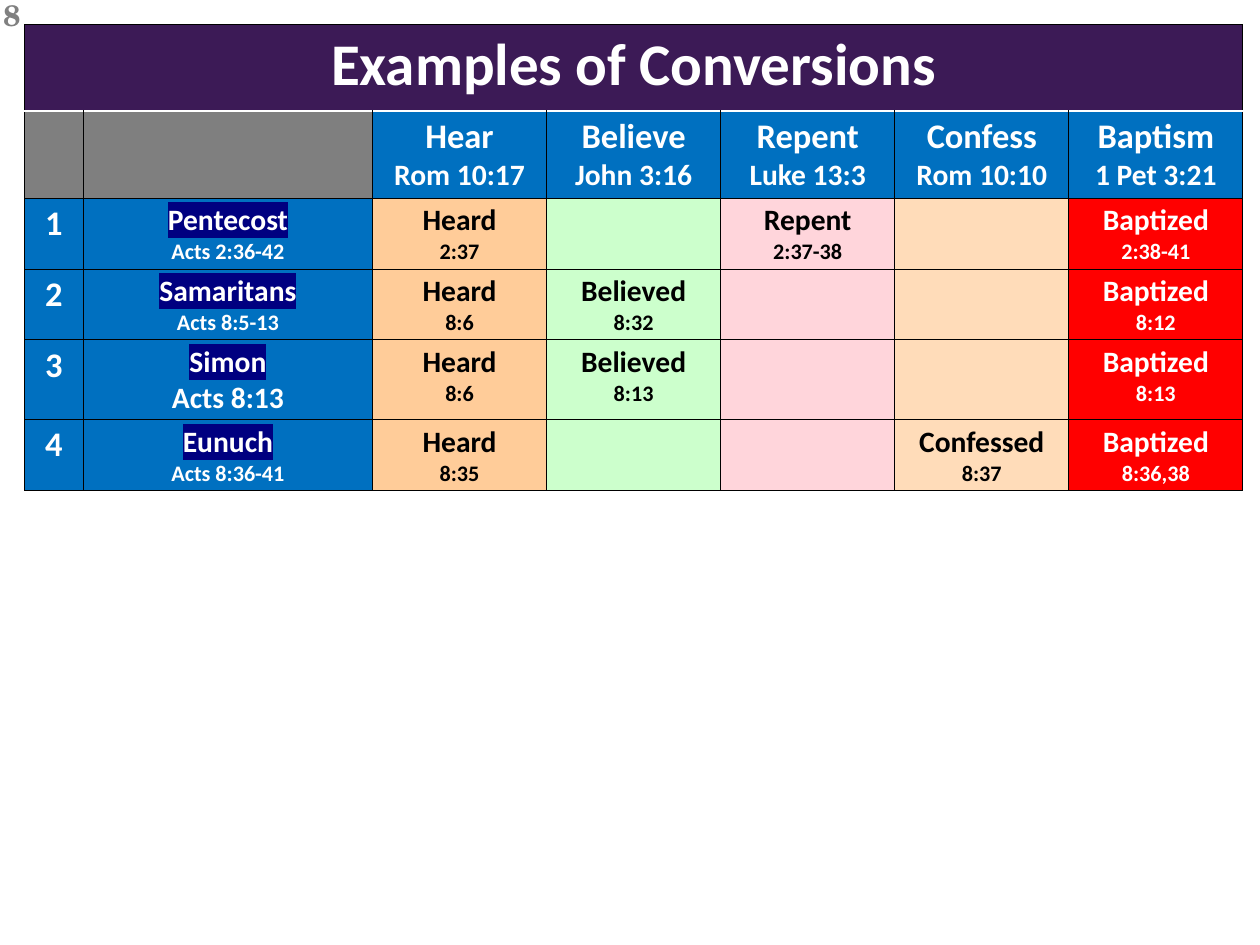
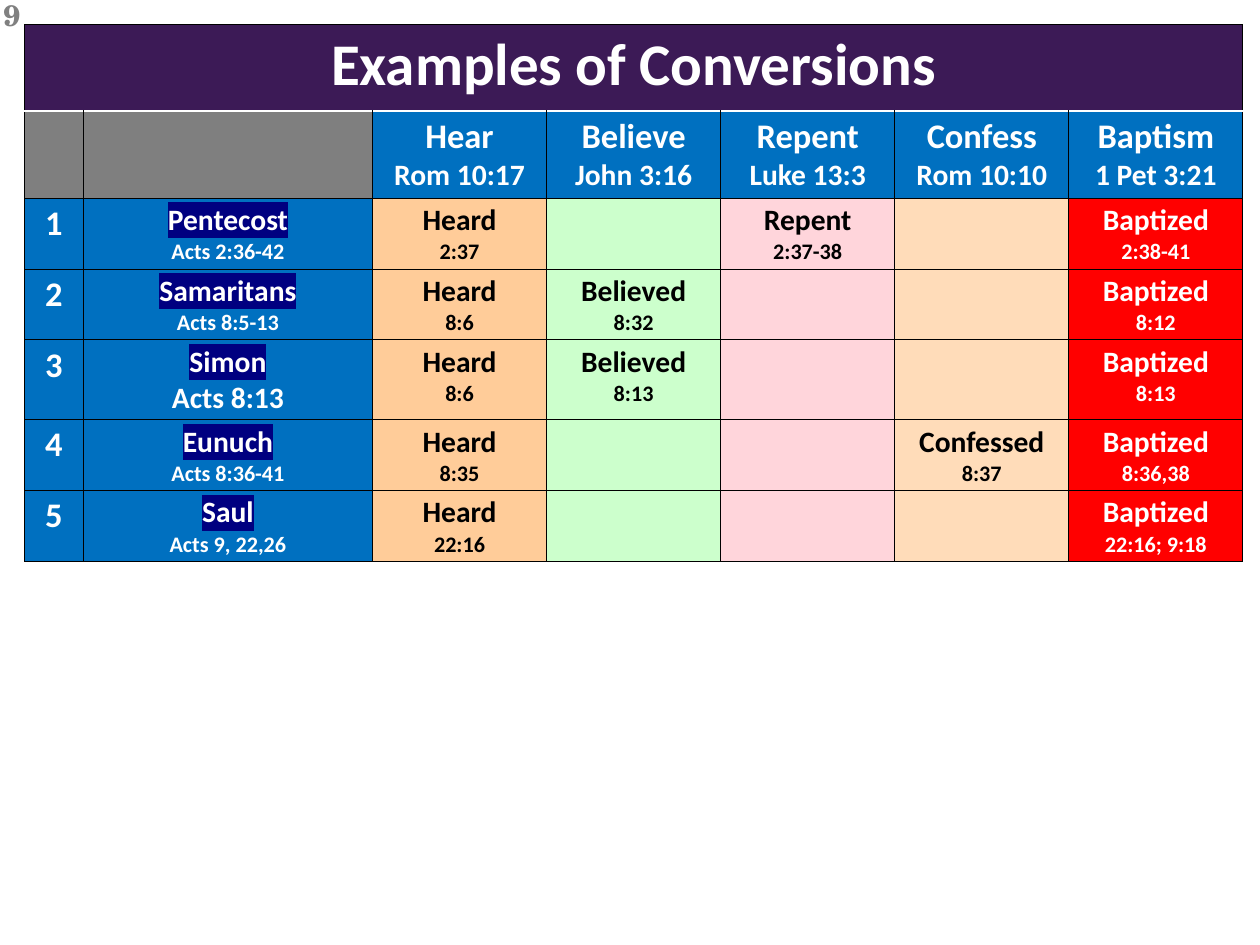
from dataclasses import dataclass

from lxml.etree import SubElement
from pptx import Presentation
from pptx.dml.color import RGBColor
from pptx.enum.text import MSO_ANCHOR, PP_ALIGN
from pptx.oxml.ns import qn
from pptx.util import Cm, Pt


@dataclass(frozen=True)
class Theme:
    # Fonts
    body_font: str = "Calibri"
    number_font: str = "TeX Gyre Schola"
    # Colours
    white: str = "FFFFFF"
    black: str = "000000"
    banner: str = "3C1A56"
    label: str = "0070C0"
    highlight: str = "000080"
    corner: str = "7F7F7F"
    page_number: str = "808080"
    steps: tuple = ("FFCC99", "CCFFCC", "FFD5DB", "FFDCB9", "FF0000")
    # Type sizes in points
    title: int = 48
    heading: int = 28
    name: int = 24
    verse: int = 18


# Content
TITLE = "Examples of Conversions"
STEPS = [("Hear", "Rom 10:17"), ("Believe", "John 3:16"), ("Repent", "Luke 13:3"),
         ("Confess", "Rom 10:10"), ("Baptism", "1 Pet 3:21")]
RESPONSES = ("Heard", "Believed", "Repent", "Confessed", "Baptized")
# Each conversion: who, passage, then the verse for each step
CONVERSIONS = [
    ("Pentecost", "Acts 2:36-42", ("2:37", "", "2:37-38", "", "2:38-41")),
    ("Samaritans", "Acts 8:5-13", ("8:6", "8:32", "", "", "8:12")),
    ("Simon", "Acts 8:13", ("8:6", "8:13", "", "", "8:13")),
    ("Eunuch", "Acts 8:36-41", ("8:35", "", "", "8:37", "8:36,38")),
    ("Saul", "Acts 9, 22,26", ("22:16", "", "", "", "22:16; 9:18")),
]
LARGE_PASSAGES = {"Simon"}

# Table measures
COLUMNS = [Cm(1.69), Cm(8.29)] + [Cm(4.99)] * len(STEPS)
HEAD_ROW, CASE_ROW = Cm(2.49), Cm(1.98)


class Deck:
    def __init__(self, theme):
        self.theme = theme
        self.prs = Presentation()
        self.prs.slide_width, self.prs.slide_height = Cm(36.12), Cm(27.1)
        self.slide = None

    def new_slide(self, number):
        self.slide = self.prs.slides.add_slide(self.prs.slide_layouts[6])
        self.page_number(number)

    def style(self, run, size, color, font=None, highlight=None):
        run.font.size, run.font.bold = Pt(size), True
        run.font.color.rgb = RGBColor.from_string(color)
        if highlight:
            mark = SubElement(run.font._element, qn("a:highlight"))
            SubElement(mark, qn("a:srgbClr"), val=highlight)
        run.font.name = font or self.theme.body_font

    def page_number(self, number):
        box = self.slide.shapes.add_textbox(Cm(-0.15), Cm(-0.2), Cm(3.4), Cm(0.84))
        frame = box.text_frame
        frame.word_wrap, frame.vertical_anchor = True, MSO_ANCHOR.TOP
        frame.text = str(number)
        self.style(frame.paragraphs[0].runs[0], self.theme.name,
                   self.theme.page_number, self.theme.number_font)

    def border(self, cell, side, color, width):
        line = SubElement(cell._tc.get_or_add_tcPr(), qn(f"a:ln{side}"), w=str(Pt(width)))
        fill = SubElement(line, qn("a:solidFill"))
        SubElement(fill, qn("a:srgbClr"), val=color)

    def cell(self, cell, fill, lines=(), color=None, white_side=None):
        """Fill and frame a cell; lines holds (text, size, highlight) per paragraph."""
        for side in "LRTB":
            if side == white_side:
                self.border(cell, side, self.theme.white, 2)
            else:
                self.border(cell, side, self.theme.black, 0.75)
        cell.fill.solid()
        cell.fill.fore_color.rgb = RGBColor.from_string(fill)
        if not lines:
            return
        cell.text_frame.text = "\n".join(text for text, _, _ in lines)
        for paragraph, (_, size, highlight) in zip(cell.text_frame.paragraphs, lines):
            paragraph.alignment = PP_ALIGN.CENTER
            self.style(paragraph.runs[0], size, color or self.theme.white,
                       highlight=highlight)

    def conversions_table(self, conversions):
        theme = self.theme
        heights = [HEAD_ROW] * 2 + [CASE_ROW] * len(conversions)
        table = self.slide.shapes.add_table(
            len(heights), len(COLUMNS), Cm(0.7), Cm(0.7),
            sum(COLUMNS), sum(heights)).table
        table.first_row = table.horz_banding = False
        for column, width in zip(table.columns, COLUMNS):
            column.width = width
        for row, height in zip(table.rows, heights):
            row.height = height

        # Banner row
        banner = table.cell(0, 0)
        banner.merge(table.cell(0, len(COLUMNS) - 1))
        for col in range(len(COLUMNS)):
            lines = [(TITLE, theme.title, None)] if col == 0 else ()
            self.cell(table.cell(0, col), theme.banner, lines, white_side="B")

        # Step headings
        for col in range(2):
            self.cell(table.cell(1, col), theme.corner, white_side="T")
        for col, (step, verse) in enumerate(STEPS, 2):
            self.cell(table.cell(1, col), theme.label,
                      [(step, theme.heading, None), (verse, theme.name, None)],
                      white_side="T")

        # One row per conversion
        for row, (who, passage, verses) in enumerate(conversions, 2):
            passage_size = theme.name if who in LARGE_PASSAGES else theme.verse
            self.cell(table.cell(row, 0), theme.label,
                      [(str(row - 1), theme.heading, None)])
            self.cell(table.cell(row, 1), theme.label,
                      [(who, theme.name, theme.highlight), (passage, passage_size, None)])
            answers = zip(RESPONSES, verses, theme.steps)
            for col, (response, verse, fill) in enumerate(answers, 2):
                lines = [(response, theme.name, None), (verse, theme.verse, None)]
                color = theme.white if response == RESPONSES[-1] else theme.black
                self.cell(table.cell(row, col), fill, lines if verse else (), color)


def main():
    deck = Deck(Theme())
    # Each slide adds the next conversion
    for number, shown in ((8, 4), (9, 5)):
        deck.new_slide(number)
        deck.conversions_table(CONVERSIONS[:shown])
    deck.prs.save("out.pptx")


if __name__ == "__main__":
    main()
